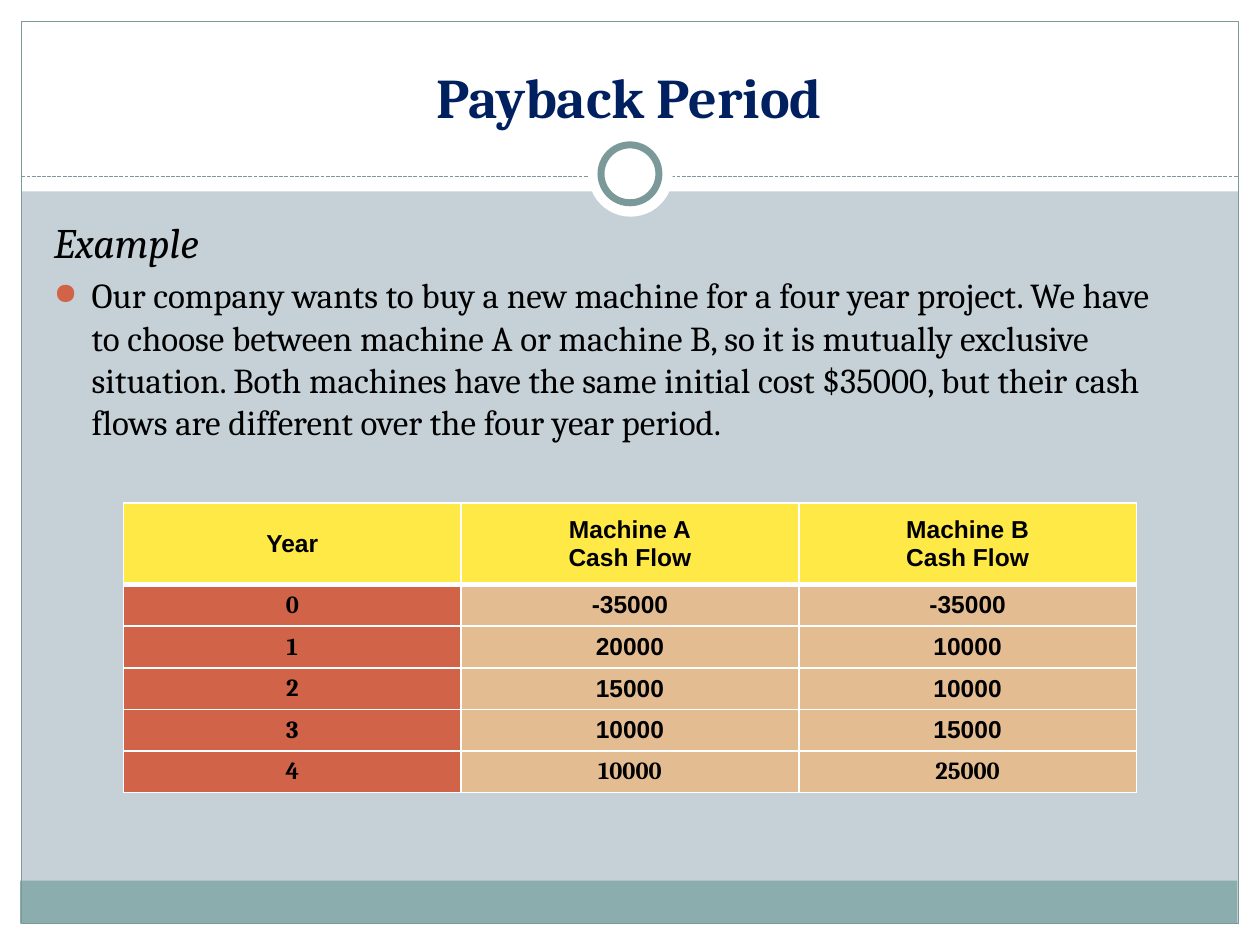
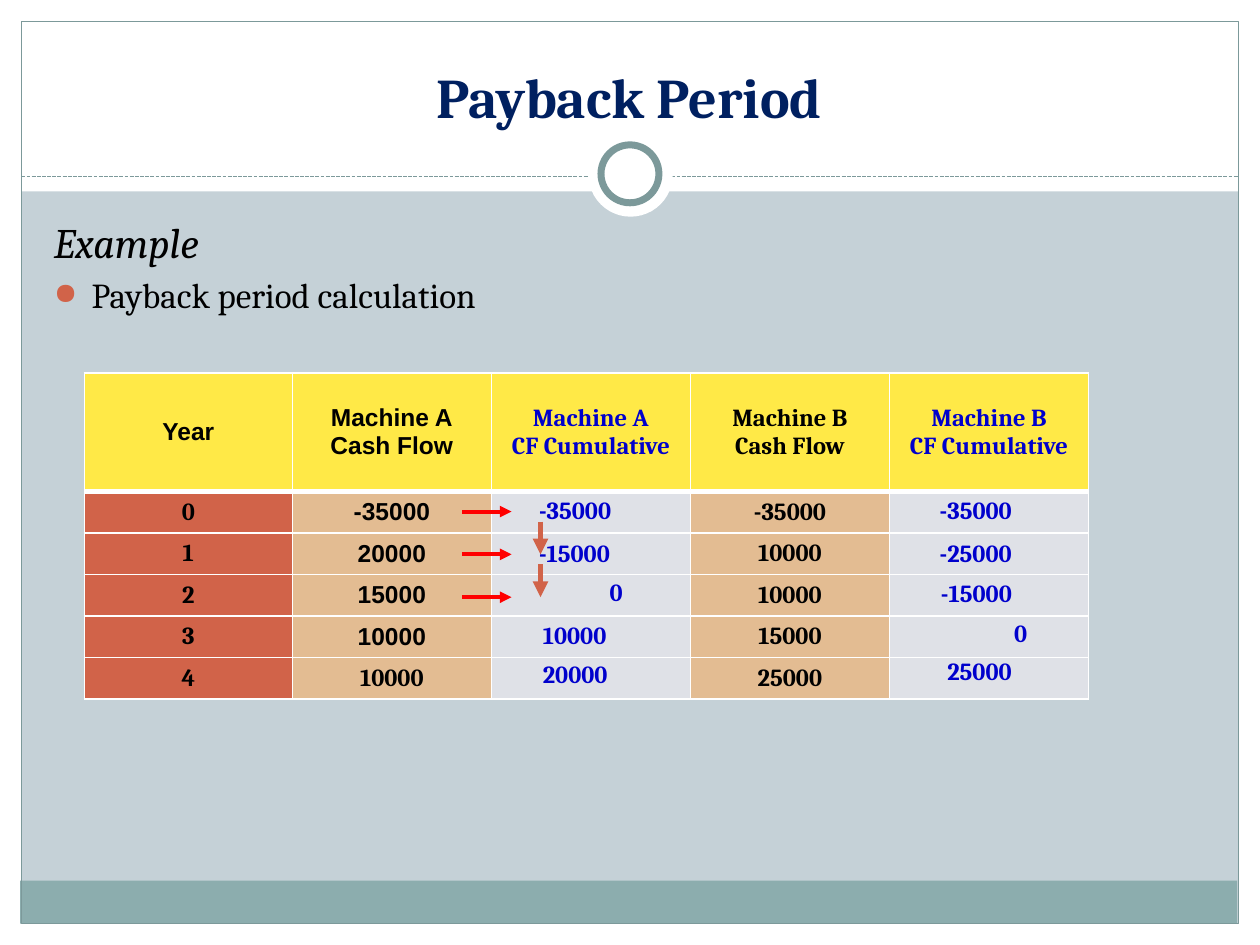
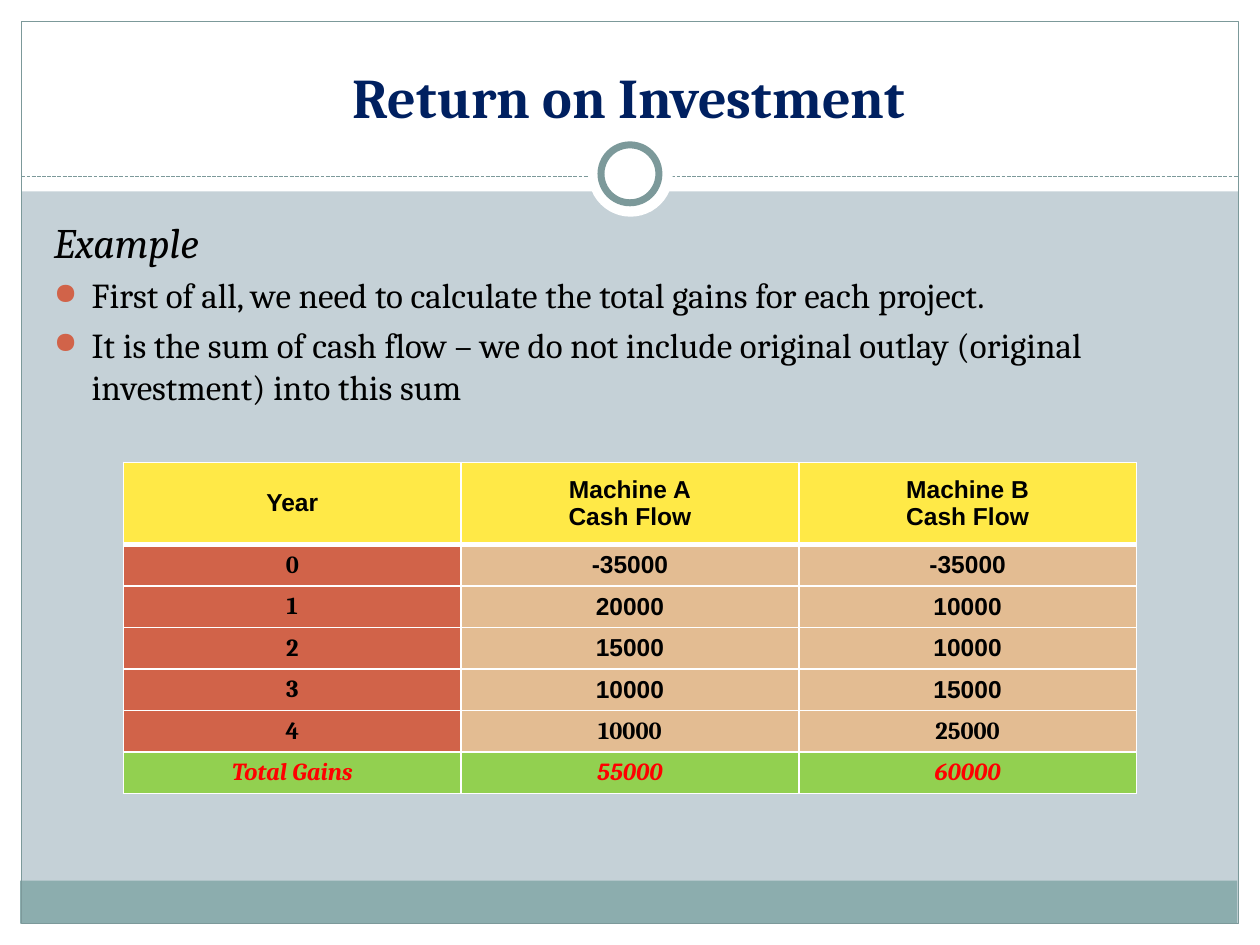
from dataclasses import dataclass

from lxml import etree
from pptx import Presentation
from pptx.dml.color import RGBColor as RGB
from pptx.enum.dml import MSO_LINE
from pptx.enum.shapes import MSO_CONNECTOR as CONN, MSO_SHAPE as SHAPE
from pptx.enum.text import MSO_ANCHOR as ANCHOR, MSO_AUTO_SIZE as AUTO, PP_ALIGN as ALIGN
from pptx.oxml.ns import qn
from pptx.util import Inches, Pt


@dataclass(frozen=True)
class Theme:
    background: str = "C5D1D7"
    white: str = "FFFFFF"
    black: str = "000000"
    frame: str = "7C999A"
    footer: str = "8CADAE"
    title: str = "002060"
    accent: str = "D16349"
    header: str = "FFE947"
    flow: str = "E3BC92"
    cumulative: str = "DFE1E7"
    total: str = "92D050"
    blue: str = "0000CC"
    red: str = "FF0000"
    serif: str = "Cambria"
    sans: str = "Arial"
    title_size: int = 32
    lead_size: int = 24
    body_size: int = 20
    table_size: int = 14


T = Theme()


@dataclass(frozen=True)
class Column:
    header: str
    values: tuple
    fill: str = T.flow
    font: str = T.sans
    header_font: str = T.sans
    header_color: str = T.black


EMPTY = ("",) * 5
FLOW_A = ("-35000", "20000", "15000", "10000", "10000")
FLOW_B = ("-35000", "10000", "10000", "15000", "25000")
YEAR = Column("Year", ("0", "1", "2", "3", "4"), T.accent, T.serif)
MACHINE_A = Column("Machine A\nCash Flow", FLOW_A)
MACHINE_B = Column("Machine B\nCash Flow", FLOW_B)
MACHINE_B_SERIF = Column("Machine B\nCash Flow", FLOW_B, T.flow, T.serif, T.serif)
CUMULATIVE_A, CUMULATIVE_B = (
    Column(f"Machine {name}\nCF Cumulative", EMPTY, T.cumulative, T.serif, T.serif, T.blue)
    for name in "AB"
)

CUMULATIVE_LABELS = (
    ("-35000", 4.18, 3.88), ("-15000", 4.18, 4.22), ("0", 4.74, 4.53),
    ("10000", 4.21, 4.87), ("20000", 4.21, 5.18),
    ("-35000", 7.36, 3.88), ("-25000", 7.36, 4.22), ("-15000", 7.37, 4.54),
    ("0", 7.95, 4.86), ("25000", 7.42, 5.16),
)


def add_run(p, text, size, color=T.black, font=T.serif, bold=False, italic=False):
    r = p.add_run()
    r.text = text
    r.font.size = Pt(size)
    r.font.name = font
    r.font.bold = bold
    r.font.italic = italic
    r.font.color.rgb = RGB.from_string(color)


def add_box(slide, kind, at, fill=None, line=None, width=0.75):
    sp = slide.shapes.add_shape(kind, *map(Inches, at))
    sp.shadow.inherit = False
    if fill:
        sp.fill.solid()
        sp.fill.fore_color.rgb = RGB.from_string(fill)
    else:
        sp.fill.background()
    if line:
        sp.line.color.rgb = RGB.from_string(line)
        sp.line.width = Pt(width)
    else:
        sp.line.fill.background()


def add_line(slide, points, color, width, dash=None, arrow=False):
    cn = slide.shapes.add_connector(CONN.STRAIGHT, *map(Inches, points))
    cn.line.color.rgb = RGB.from_string(color)
    cn.line.width = Pt(width)
    if dash:
        cn.line.dash_style = dash
    if arrow:
        etree.SubElement(cn.line._get_or_add_ln(), qn("a:tailEnd"), type="triangle")
    etree.SubElement(cn._element.spPr, qn("a:effectLst"))


def add_text(slide, at, wrap=True, anchor=ANCHOR.TOP):
    tf = slide.shapes.add_textbox(*map(Inches, at)).text_frame
    tf.word_wrap = wrap
    tf.auto_size = AUTO.NONE if wrap else AUTO.SHAPE_TO_FIT_TEXT
    tf.vertical_anchor = anchor
    return tf


def add_frame(slide):
    slide.background.fill.solid()
    slide.background.fill.fore_color.rgb = RGB.from_string(T.background)
    for at in ((0, 7.33, 10, 0.17), (0, 0, 10, 1.52), (0, 0, 0.17, 7.5), (9.83, 0, 0.17, 7.5)):
        add_box(slide, SHAPE.RECTANGLE, at, T.white)
    add_box(slide, SHAPE.RECTANGLE, (0.16, 6.99, 9.66, 0.34), T.footer)
    add_box(slide, SHAPE.RECTANGLE, (0.17, 0.17, 9.66, 7.16), line=T.frame)
    add_line(slide, (0.17, 1.4, 9.83, 1.4), T.frame, 0.75, MSO_LINE.SQUARE_DOT)
    add_box(slide, SHAPE.OVAL, (4.67, 1.05, 0.67, 0.67), T.white)
    add_box(slide, SHAPE.OVAL, (4.77, 1.15, 0.46, 0.46), T.white, T.frame, 4)


def add_bullet(p):
    pPr = p._p.get_or_add_pPr()
    pPr.set("marL", str(Inches(0.3)))
    pPr.set("indent", str(Inches(-0.3)))
    color = etree.SubElement(pPr, qn("a:buClr"))
    etree.SubElement(color, qn("a:srgbClr"), val=T.accent)
    etree.SubElement(pPr, qn("a:buSzPct"), val="85000")
    etree.SubElement(pPr, qn("a:buChar"), char="●")


def add_body(slide, bullets):
    tf = add_text(slide, (0.33, 1.67, 9.16, 5))
    p = tf.paragraphs[0]
    p.space_before = Pt(0.2 * T.lead_size)
    add_run(p, "Example", T.lead_size, italic=True)
    for text in bullets:
        p = tf.add_paragraph()
        p.space_before = Pt(0.2 * T.body_size)
        add_bullet(p)
        add_run(p, text, T.body_size)


def new_slide(prs, title, bullets):
    slide = prs.slides.add_slide(prs.slide_layouts[6])
    add_frame(slide)
    p = add_text(slide, (0.33, 0.25, 9.33, 0.83), anchor=ANCHOR.BOTTOM).paragraphs[0]
    p.alignment = ALIGN.CENTER
    add_run(p, title, T.title_size, T.title, bold=True)
    add_body(slide, bullets)
    return slide


def set_borders(cell, top, bottom):
    tcPr = cell._tc.get_or_add_tcPr()
    for side, width in (("L", 1), ("R", 1), ("T", top), ("B", bottom)):
        ln = etree.SubElement(tcPr, qn(f"a:ln{side}"), w=str(Pt(width)))
        fill = etree.SubElement(ln, qn("a:solidFill"))
        etree.SubElement(fill, qn("a:srgbClr"), val=T.white)


def fill_cell(cell, text, fill, inset, top=1, bottom=1, **style):
    set_borders(cell, top, bottom)
    cell.fill.solid()
    cell.fill.fore_color.rgb = RGB.from_string(fill)
    cell.vertical_anchor = ANCHOR.MIDDLE
    cell.margin_left = cell.margin_right = Inches(inset)
    cell.margin_top = cell.margin_bottom = 0
    if not text:
        return
    tf = cell.text_frame
    for i, line in enumerate(text.split("\n")):
        p = tf.add_paragraph() if i else tf.paragraphs[0]
        p.alignment = ALIGN.CENTER
        add_run(p, line, T.table_size, bold=True, **style)


def add_cash_table(slide, left, top, columns, widths, header_height, totals=(), inset=0.07):
    heights = [header_height] + [0.33] * (len(YEAR.values) + bool(totals))
    tbl = slide.shapes.add_table(
        len(heights), len(columns), Inches(left), Inches(top),
        Inches(sum(widths)), Inches(sum(heights))).table
    tbl.first_row = tbl.horz_banding = False
    for row, height in zip(tbl.rows, heights):
        row.height = Inches(height)
    for c, (column, width) in enumerate(zip(columns, widths)):
        tbl.columns[c].width = Inches(width)
        fill_cell(tbl.cell(0, c), column.header, T.header, inset, bottom=3,
                  font=column.header_font, color=column.header_color)
        for r, value in enumerate(column.values, 1):
            font = T.serif if r == len(column.values) else column.font
            fill_cell(tbl.cell(r, c), value, column.fill, inset, top=3 if r == 1 else 1, font=font)
    for c, value in enumerate(totals):
        fill_cell(tbl.cell(len(heights) - 1, c), value, T.total, inset, color=T.red, italic=True)


def add_cumulative_labels(slide):
    for text, left, top in CUMULATIVE_LABELS:
        width = 0.34 if text == "0" else 0.93
        tf = add_text(slide, (left, top, width, 0.34), wrap=False)
        add_run(tf.paragraphs[0], text, T.table_size, T.blue, bold=True)


def add_flow_arrows(slide):
    for i in range(3):
        y = 4.06 + 0.34 * i
        add_line(slide, (3.67, y, 4.06, y), T.red, 2.25, arrow=True)
    for i in range(2):
        y = 4.14 + 0.34 * i
        add_line(slide, (4.29, y, 4.29, y + 0.26), T.accent, 3, arrow=True)


def main():
    prs = Presentation()
    prs.slide_width, prs.slide_height = Inches(10), Inches(7.5)
    cash_flows = (YEAR, MACHINE_A, MACHINE_B)
    thirds = [2.68] * 3

    slide = new_slide(prs, "Payback Period", [
        "Our company wants to buy a new machine for a four year project. We have to choose "
        "between machine A or machine B, so it is mutually exclusive situation. Both machines "
        "have the same initial cost $35000, but their cash flows are different over the four "
        "year period."])
    add_cash_table(slide, 0.98, 3.99, cash_flows, thirds, 0.65)

    slide = new_slide(prs, "Payback Period", ["Payback period calculation"])
    columns = (YEAR, MACHINE_A, CUMULATIVE_A, MACHINE_B_SERIF, CUMULATIVE_B)
    add_cash_table(slide, 0.67, 2.96, columns, [1.65] + [1.58] * 4, 0.94, inset=0.08)
    add_cumulative_labels(slide)
    add_flow_arrows(slide)

    slide = new_slide(prs, "Return on Investment", [
        "First of all, we need to calculate the total gains for each project.",
        "It is the sum of cash flow – we do not include original outlay (original investment) "
        "into this sum"])
    add_cash_table(slide, 0.98, 3.67, cash_flows, thirds, 0.65, ("Total Gains", "55000", "60000"))

    prs.save("out.pptx")


if __name__ == "__main__":
    main()
